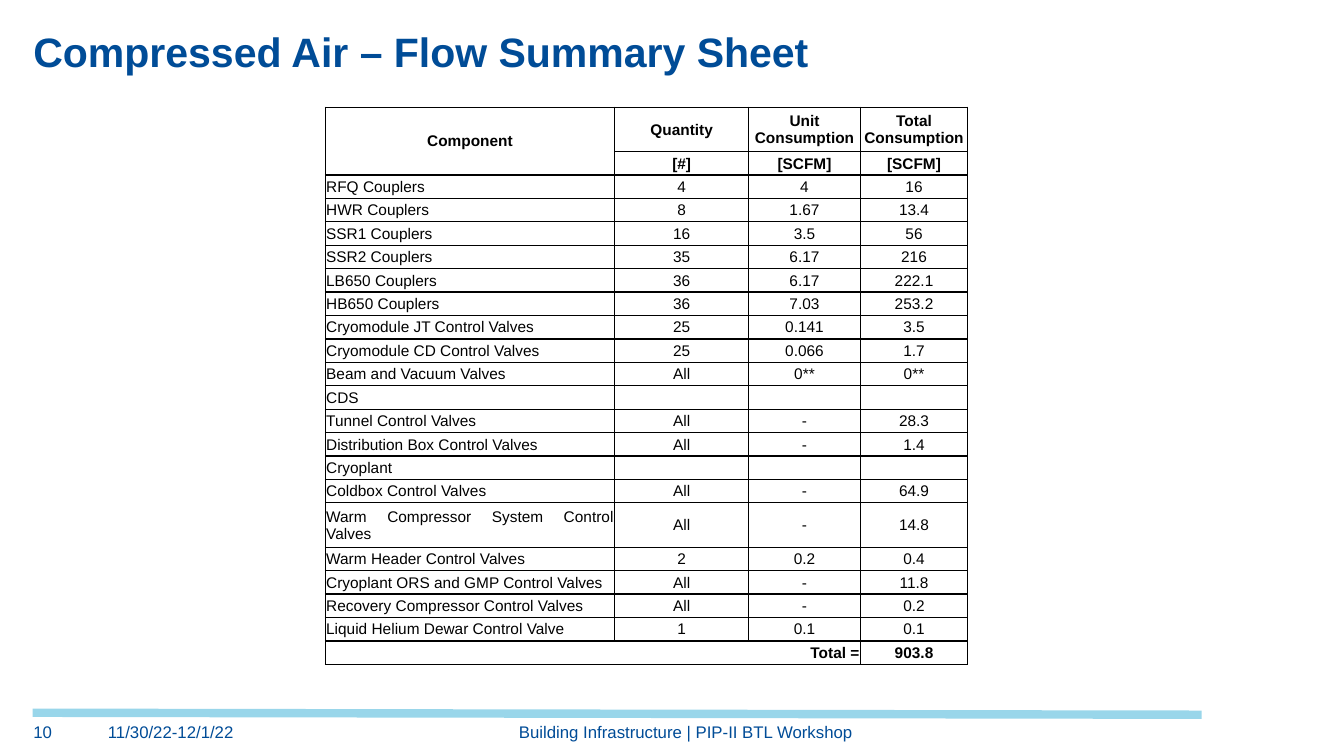
"""Build the compressed air flow summary slide."""
from lxml.etree import SubElement
from pptx import Presentation
from pptx.dml.color import RGBColor
from pptx.enum.shapes import MSO_CONNECTOR
from pptx.enum.text import MSO_ANCHOR, MSO_AUTO_SIZE, PP_ALIGN
from pptx.oxml.ns import qn
from pptx.util import Cm, Pt

COLORS = {"navy": "004C97", "sky": "99D6EA", "black": "000000"}
ROW_HEIGHT, TALL_ROW_HEIGHT = 0.59, 1.12
COLUMN_WIDTHS = [7.29, 3.38, 2.81, 2.71]
HEADER_ROWS = 2
FLOWS = [
    ("Component", "Quantity", "Unit Consumption", "Total Consumption"),
    ("", "[#]", "[SCFM]", "[SCFM]"),
    ("RFQ Couplers", "4", "4", "16"),
    ("HWR Couplers", "8", "1.67", "13.4"),
    ("SSR1 Couplers", "16", "3.5", "56"),
    ("SSR2 Couplers", "35", "6.17", "216"),
    ("LB650 Couplers", "36", "6.17", "222.1"),
    ("HB650 Couplers", "36", "7.03", "253.2"),
    ("Cryomodule JT Control Valves", "25", "0.141", "3.5"),
    ("Cryomodule CD Control Valves", "25", "0.066", "1.7"),
    ("Beam and Vacuum Valves", "All", "0**", "0**"),
    ("CDS", "", "", ""),
    ("Tunnel Control Valves", "All", "-", "28.3"),
    ("Distribution Box Control Valves", "All", "-", "1.4"),
    ("Cryoplant", "", "", ""),
    ("Coldbox Control Valves", "All", "-", "64.9"),
    ("Warm Compressor System Control Valves", "All", "-", "14.8"),
    ("Warm Header Control Valves", "2", "0.2", "0.4"),
    ("Cryoplant ORS and GMP Control Valves", "All", "-", "11.8"),
    ("Recovery Compressor Control Valves", "All", "-", "0.2"),
    ("Liquid Helium Dewar Control Valve", "1", "0.1", "0.1"),
    ("Total =", "", "", "903.8"),
]
TOTAL_ROW = len(FLOWS) - 1
TALL_ROWS = {0, 16}


def style_paragraph(paragraph, size, color, bold, alignment):
    paragraph.alignment = alignment
    paragraph.font.name = "Arial"
    paragraph.font.size = Pt(size)
    paragraph.font.bold = bold
    paragraph.font.color.rgb = RGBColor.from_string(COLORS[color])


def clear_insets(frame):
    frame.margin_left = frame.margin_right = 0
    frame.margin_top = frame.margin_bottom = 0
    frame.word_wrap = True
    frame.auto_size = MSO_AUTO_SIZE.NONE


presentation = Presentation()
presentation.slide_width, presentation.slide_height = Cm(33.87), Cm(19.05)
slide = presentation.slides.add_slide(presentation.slide_layouts[5])

footer_rule = slide.shapes.add_connector(
    MSO_CONNECTOR.STRAIGHT, Cm(0.82), Cm(17.96), Cm(30.28), Cm(18.01))
footer_rule.line.color.rgb = RGBColor.from_string(COLORS["sky"])
footer_rule.line.width = Pt(6)
SubElement(footer_rule._element.spPr, qn("a:effectLst"))

title = slide.shapes.title
title.left, title.top, title.width, title.height = Cm(0.84), Cm(0.71), Cm(32.18), Cm(1.19)
title.text_frame.text = "Compressed Air – Flow Summary Sheet"
clear_insets(title.text_frame)
title.text_frame.vertical_anchor = MSO_ANCHOR.BOTTOM
style_paragraph(title.text_frame.paragraphs[0], 29.3, "navy", True, PP_ALIGN.LEFT)

for wording, left, width, alignment in [
    ("11/30/22-12/1/22", 2.72, 4.04, PP_ALIGN.LEFT),
    ("Building Infrastructure | PIP-II BTL Workshop", 5.69, 23.19, PP_ALIGN.CENTER),
    ("10", 0.84, 1.52, PP_ALIGN.LEFT),
]:
    footer = slide.shapes.add_textbox(Cm(left), Cm(18.19), Cm(width), Cm(0.67)).text_frame
    footer.text = wording
    clear_insets(footer)
    style_paragraph(footer.paragraphs[0], 12, "navy", False, alignment)

row_heights = [TALL_ROW_HEIGHT if row in TALL_ROWS else ROW_HEIGHT
               for row in range(len(FLOWS))]
flow_table = slide.shapes.add_table(
    len(FLOWS), len(COLUMN_WIDTHS), Cm(8.2), Cm(2.7),
    Cm(sum(COLUMN_WIDTHS)), Cm(sum(row_heights))).table
flow_table.first_row = flow_table.horz_banding = False
for column, width in zip(flow_table.columns, COLUMN_WIDTHS):
    column.width = Cm(width)
for table_row, height in zip(flow_table.rows, row_heights):
    table_row.height = Cm(height)

for row, values in enumerate(FLOWS):
    for column, value in enumerate(values):
        cell = flow_table.cell(row, column)
        cell.text = value
        cell.vertical_anchor = MSO_ANCHOR.MIDDLE
        cell.margin_left = cell.margin_right = cell.margin_top = Cm(0.02)
        cell.margin_bottom = 0
        if column or row < HEADER_ROWS:
            alignment = PP_ALIGN.CENTER
        else:
            alignment = PP_ALIGN.RIGHT if row == TOTAL_ROW else PP_ALIGN.JUSTIFY
        bold = row < HEADER_ROWS or row == TOTAL_ROW
        paragraph = cell.text_frame.paragraphs[0]
        style_paragraph(paragraph, 11, "black", bold, alignment)
        if not value:
            SubElement(paragraph._p, qn("a:endParaRPr"), sz="1100")
        cell_properties = cell._tc.get_or_add_tcPr()
        for side in ("a:lnL", "a:lnR", "a:lnT", "a:lnB"):
            border = SubElement(cell_properties, qn(side), w=str(Pt(1)))
            border_fill = SubElement(border, qn("a:solidFill"))
            SubElement(border_fill, qn("a:srgbClr"), val=COLORS["black"])
        cell.fill.background()

flow_table.cell(0, 0).merge(flow_table.cell(1, 0))
flow_table.cell(TOTAL_ROW, 0).merge(flow_table.cell(TOTAL_ROW, 2))

presentation.save("out.pptx")
